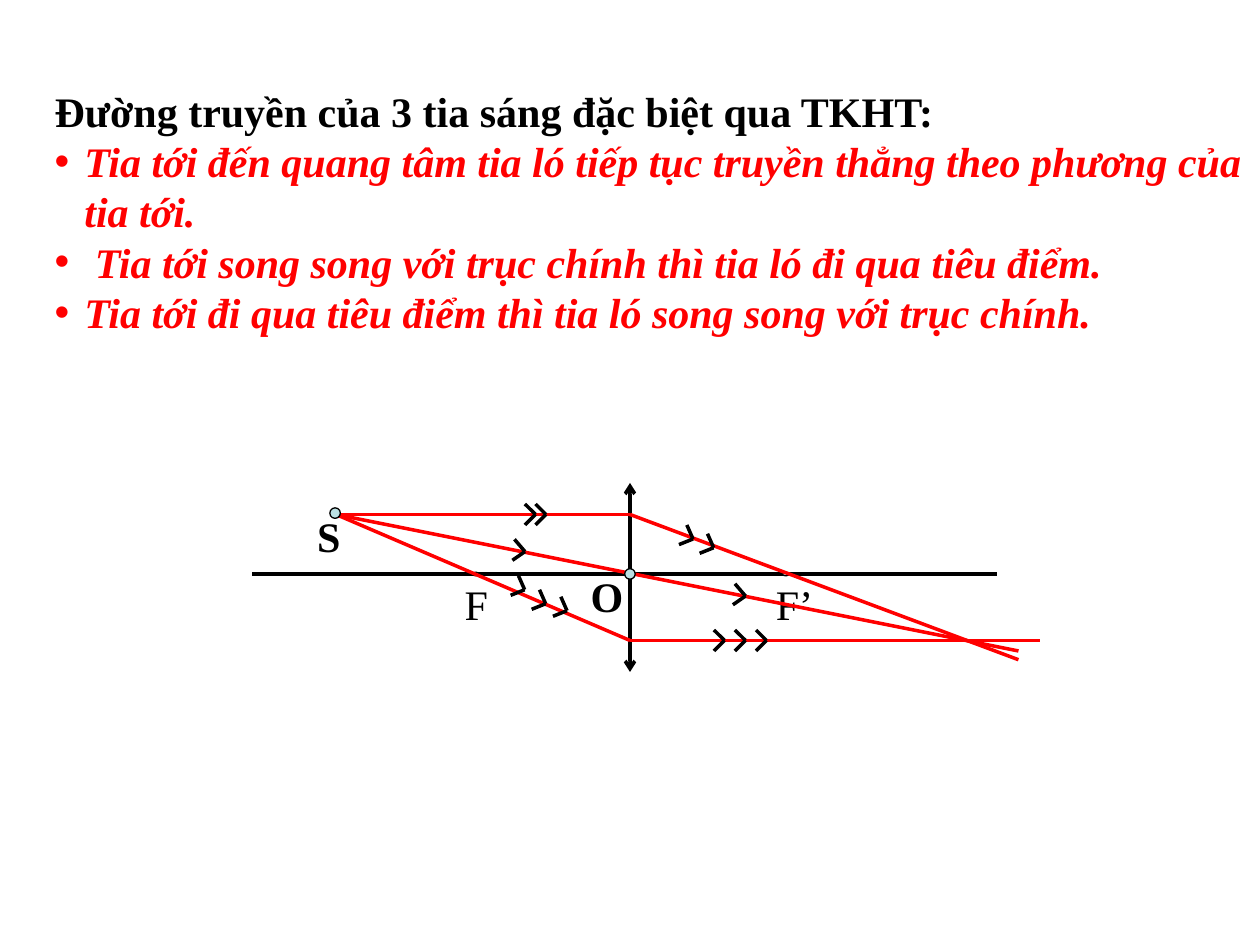
from typing import NamedTuple

from lxml.etree import SubElement
from pptx import Presentation
from pptx.dml.color import RGBColor
from pptx.enum.shapes import MSO_CONNECTOR, MSO_SHAPE
from pptx.enum.text import MSO_ANCHOR, MSO_AUTO_SIZE as AUTO
from pptx.oxml.ns import qn
from pptx.util import Pt

BLACK, RED, WHITE, PALE_BLUE = "000000", "FF0000", "FFFFFF", "BBE0E3"


class Line(NamedTuple):
    x1: float
    y1: float
    x2: float
    y2: float
    color: str = RED
    arrows: bool = False


class Dot(NamedTuple):
    x: float
    y: float
    w: float
    h: float


class Label(NamedTuple):
    text: str
    x: float
    y: float
    w: float
    bold: bool


class Chevrons(NamedTuple):
    """Arrow marks along one ray: offsets of both tails, and the tips."""
    tails: tuple
    tips: tuple


LENS_X, AXIS_Y, TOP_Y, BOTTOM_Y = 360, 328, 294, 366
SOURCE_X = 192

AXES = [
    Line(144, AXIS_Y, 570, AXIS_Y, BLACK),
    Line(LENS_X, 276, LENS_X, 384, BLACK, True),
]
RAYS = [
    Line(SOURCE_X, TOP_Y, LENS_X, TOP_Y),
    Line(SOURCE_X, TOP_Y, LENS_X, BOTTOM_Y),
    Line(LENS_X, TOP_Y, 582, 377),
    Line(LENS_X, BOTTOM_Y, 594, BOTTOM_Y),
    Line(SOURCE_X, TOP_Y, 582, 372),
]
FOCI = [Dot(271.8, AXIS_Y, 3.6, 2), Dot(449, AXIS_Y, 3.6, 2)]
POINTS = [Dot(191.5, 293.2, 6, 6), Dot(LENS_X, AXIS_Y, 6, 6)]
FOCUS_LABELS = [
    Label("F", 258.5, 327, 28, False),
    Label("F’", 436.3, 327, 36, False),
]
POINT_LABELS = [
    Label("S", 174.2, 288, 28, True),
    Label("O", 330.5, 322.6, 33, True),
]

LEVEL = ((-6, -6), (-6, 6))
GENTLE = ((-6, -7), (-7.2, 5))
STEEP = ((-3.5, -8), (-8, 3.2))
CHEVRONS = [
    Chevrons(LEVEL, ((306, TOP_Y), (312, TOP_Y))),
    Chevrons(LEVEL, tuple((x, BOTTOM_Y) for x in (414, 426, 438))),
    Chevrons(GENTLE, ((300, 315.2), (426, 340.6))),
    Chevrons(STEEP, ((396, 308), (407.8, 313))),
    Chevrons(STEEP, ((299.8, 337), (311.8, 345), (324, 349))),
]

HEADING = "Đường truyền của 3 tia sáng đặc biệt qua TKHT:"
RULES = [
    "Tia tới đến quang tâm tia ló tiếp tục truyền thẳng theo phương của tia tới.",
    " Tia tới song song với trục chính thì tia ló đi qua tiêu điểm.",
    "Tia tới đi qua tiêu điểm thì tia ló song song với trục chính.",
]


def paint(color_format, color: str) -> None:
    """Apply a hex colour to a fill, line fill or font fill."""
    color_format.solid()
    color_format.fore_color.rgb = RGBColor.from_string(color)


def write(p, text: str, color: str, **formats) -> None:
    r = p.add_run()
    r.text = text
    for name, value in {"name": "Times New Roman", "size": Pt(24), **formats}.items():
        setattr(r.font, name, value)
    paint(r.font.fill, color)


def draw_line(shapes, line: Line) -> None:
    ends = (Pt(v) for v in line[:4])
    s = shapes.add_connector(MSO_CONNECTOR.STRAIGHT, *ends)
    paint(s.line.fill, line.color)
    s.line.width = Pt(2)
    if line.arrows:
        ln = s.line._get_or_add_ln()
        for end in ("a:headEnd", "a:tailEnd"):
            SubElement(ln, qn(end), type="arrow")
    SubElement(s._element.spPr, qn("a:effectLst"))


def draw_chevrons(shapes, marks: Chevrons) -> None:
    for x, y in marks.tips:
        for dx, dy in marks.tails:
            draw_line(shapes, Line(x + dx, y + dy, x, y, BLACK))


def draw_dot(shapes, dot: Dot) -> None:
    s = shapes.add_shape(MSO_SHAPE.OVAL, Pt(dot.x - dot.w / 2), Pt(dot.y - dot.h / 2),
                         Pt(dot.w), Pt(dot.h))
    s.shadow.inherit = False
    paint(s.fill, PALE_BLUE)
    paint(s.line.fill, BLACK)
    s.line.width = Pt(0.75)


def draw_label(shapes, label: Label) -> None:
    s = shapes.add_textbox(Pt(label.x), Pt(label.y), Pt(label.w), Pt(36))
    s.text_frame.word_wrap = False
    s.text_frame.auto_size = AUTO.SHAPE_TO_FIT_TEXT
    write(s.text_frame.paragraphs[0], label.text, BLACK, bold=label.bold)


def set_bullet(p, char: str = "") -> None:
    """Give a hanging bullet, or none when char is empty."""
    pPr = p._p.get_or_add_pPr()
    indent = Pt(17) if char else 0
    pPr.set("marL", str(indent))
    pPr.set("indent", str(-indent))
    if char:
        SubElement(pPr, qn("a:buFont"), typeface="Arial")
        SubElement(pPr, qn("a:buChar"), char=char)
    else:
        SubElement(pPr, qn("a:buNone"))


def fill_body(body) -> None:
    box = {"left": 24, "top": 45, "width": 696, "height": 151}
    for name, value in box.items():
        setattr(body, name, Pt(value))
    paint(body.fill, WHITE)
    tf = body.text_frame
    frame = {"word_wrap": True, "auto_size": AUTO.SHAPE_TO_FIT_TEXT,
             "vertical_anchor": MSO_ANCHOR.TOP}
    for name, value in frame.items():
        setattr(tf, name, value)
    p = tf.paragraphs[0]
    p.space_before = Pt(0)
    set_bullet(p)
    write(p, HEADING, BLACK, bold=True)
    for rule in RULES:
        p = tf.add_paragraph()
        p.space_before = Pt(0)
        set_bullet(p, "•")
        write(p, rule, RED, bold=True, italic=True)


def main() -> None:
    prs = Presentation()
    prs.slide_width, prs.slide_height = Pt(720), Pt(540)
    slide = prs.slides.add_slide(prs.slide_layouts[1])
    title = slide.shapes.title._element
    title.getparent().remove(title)
    fill_body(slide.placeholders[1])

    diagram = slide.shapes.add_group_shape().shapes
    layers = [
        (draw_line, AXES), (draw_dot, FOCI), (draw_label, FOCUS_LABELS),
        (draw_line, RAYS), (draw_chevrons, CHEVRONS),
        (draw_dot, POINTS), (draw_label, POINT_LABELS),
    ]
    for draw, items in layers:
        for item in items:
            draw(diagram, item)
    prs.save("out.pptx")


if __name__ == "__main__":
    main()
